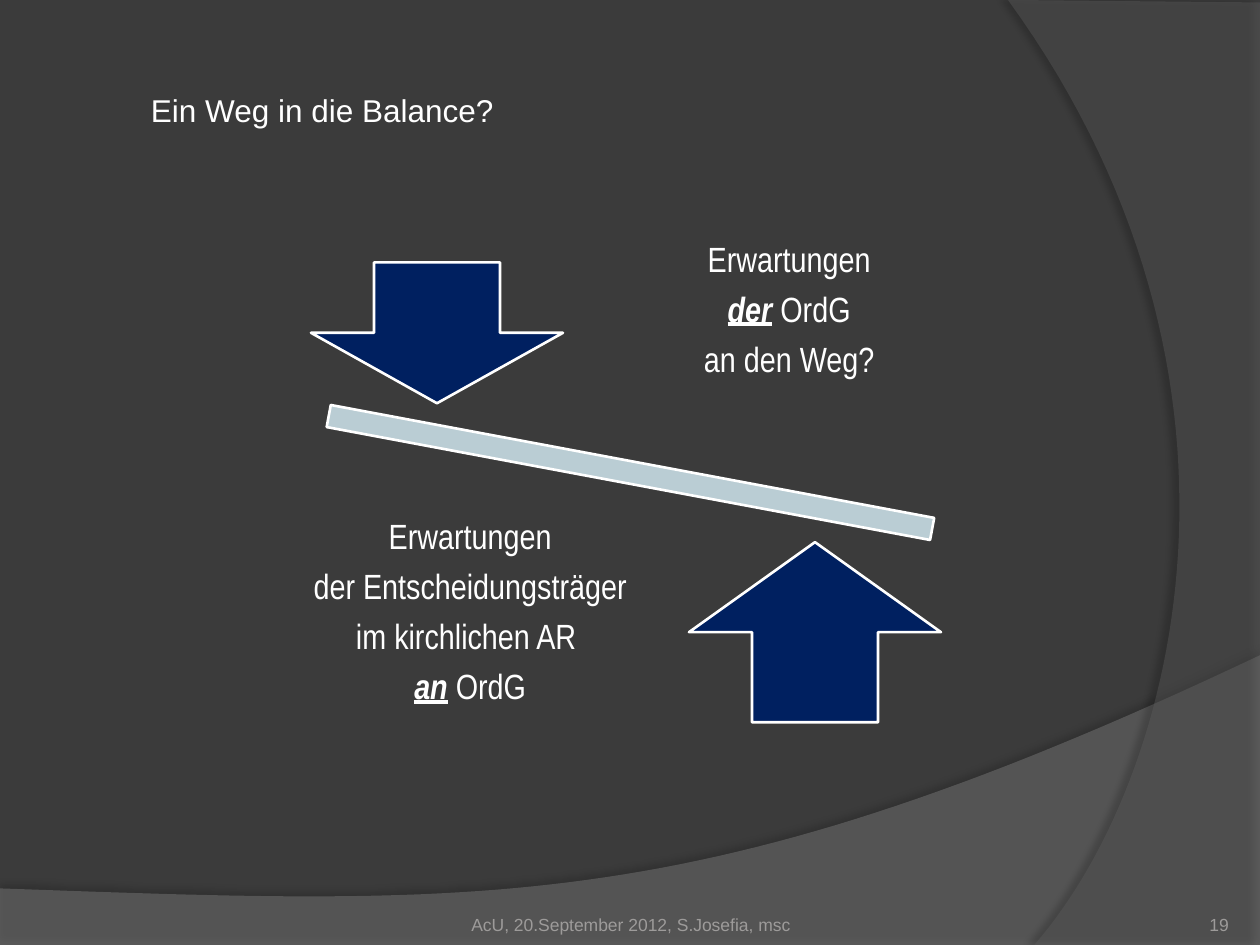
from lxml.etree import SubElement
from pptx import Presentation
from pptx.dml.color import RGBColor
from pptx.enum.shapes import MSO_SHAPE
from pptx.enum.text import MSO_ANCHOR, PP_ALIGN
from pptx.oxml.ns import qn
from pptx.util import Cm, Pt

DARK = RGBColor(0x3B, 0x3B, 0x3B)
WAVE = RGBColor(0x7F, 0x7F, 0x7F)
ARC = RGBColor(0x5E, 0x5E, 0x5E)
NAVY = RGBColor(0x00, 0x20, 0x60)
PALE = RGBColor(0xBA, 0xCD, 0xD4)
WHITE = RGBColor(0xFF, 0xFF, 0xFF)
GREY = RGBColor(0x9D, 0x9B, 0x9A)


def add_text(slide, box, lines, size=20, font="Arial", color=WHITE,
             align=PP_ALIGN.CENTER, anchor=MSO_ANCHOR.MIDDLE, inset=0,
             spacing=None, after=0):
    """Each line is a list of (text, stressed) runs."""
    frame = slide.shapes.add_textbox(*map(Cm, box)).text_frame
    frame.word_wrap = True
    frame.vertical_anchor = anchor
    frame.margin_left = frame.margin_right = Cm(inset)
    frame.margin_top = frame.margin_bottom = Cm(inset)
    for i, line in enumerate(lines):
        para = frame.add_paragraph() if i else frame.paragraphs[0]
        para.alignment = align
        para.line_spacing = spacing
        para.space_after = Pt(after)
        for words, stress in line:
            run = para.add_run()
            run.text = words
            run.font.name, run.font.size = font, Pt(size)
            run.font.color.rgb = color
            if stress:
                run.font.bold = run.font.italic = run.font.underline = True


def add_solid(slide, kind, box, fill, turn=0):
    shape = slide.shapes.add_shape(kind, *map(Cm, box))
    shape.shadow.inherit = False
    shape.fill.solid()
    shape.fill.fore_color.rgb = fill
    shape.line.color.rgb = WHITE
    shape.line.width = Pt(1.5)
    shape.rotation = turn


def curve(a, b, c, d, steps=60):
    """Points along a cubic Bezier curve."""
    for i in range(steps + 1):
        t = i / steps
        u = 1 - t
        yield tuple(u**3 * p + 3 * u * u * t * q + 3 * u * t * t * r + t**3 * s
                    for p, q, r, s in zip(a, b, c, d))


def add_sheet(slide, box, points, fill, alpha, shade, blur, dist, angle):
    """See-through outline with a soft shadow; points are relative to box."""
    spots = [(Cm(box[0] + x), Cm(box[1] + y)) for x, y in points]
    maker = slide.shapes.build_freeform(*spots[0], scale=1.0)
    maker.add_line_segments(spots[1:], close=True)
    shape = maker.convert_to_shape()
    shape.fill.solid()
    shape.fill.fore_color.rgb = fill
    shape.line.fill.background()
    shape.shadow.inherit = False
    props = shape.element.spPr
    tint = props.find(qn("a:solidFill")).find(qn("a:srgbClr"))
    SubElement(tint, qn("a:alpha"), val=str(alpha * 1000))
    shadow = SubElement(props.find(qn("a:effectLst")), qn("a:outerShdw"),
                        blurRad=str(Pt(blur)), dist=str(Pt(dist)),
                        dir=str(angle * 60000), algn="ctr", rotWithShape="0")
    black = SubElement(shadow, qn("a:srgbClr"), val="000000")
    SubElement(black, qn("a:alpha"), val=str(shade * 1000))


def add_back(slide, box):
    slide.background.fill.solid()
    slide.background.fill.fore_color.rgb = DARK
    wide, high = box[2:]
    # Wave along the bottom
    wave = curve((wide, 13.21), (14.2, 18.52), (9.93, 18.26), (0, 17.91))
    add_sheet(slide, box, [(0, high), (wide, high), *wave],
              WAVE, 45, 35, 4, 3.5, 270)
    # Arc down the right side
    arc = curve((20.85, high), (23.75, 15.72), (25.86, 7.62), (20.32, 0))
    add_sheet(slide, box, [(wide, 0.05), (wide, high), *arc],
              ARC, 40, 45, 4, 4, 180)


def add_scale(slide, box):
    left, top = box[:2]

    def place(x, y, w, h):
        return left + x, top + y, w, h

    style = dict(font="Arial Narrow", inset=0.41, spacing=0.9, after=7)
    # Tilted beam
    add_solid(slide, MSO_SHAPE.MATH_MINUS, place(0, 4.67, 16.84, 1.93),
              PALE, turn=10.6)
    # Arrows pressing on both ends
    add_solid(slide, MSO_SHAPE.DOWN_ARROW, place(1.98, 1.4, 5.08, 2.84), NAVY)
    add_solid(slide, MSO_SHAPE.UP_ARROW, place(9.6, 7.04, 5.08, 3.63), NAVY)
    # Expectations of either side
    add_text(slide, place(7.44, 0, 8.36, 4.75),
             [[("Erwartungen", False)],
              [("der", True), (" OrdG", False)],
              [("an den Weg?", False)]], **style)
    add_text(slide, place(0.81, 6.1, 8.76, 4.75),
             [[("Erwartungen", False)],
              [("der Entscheidungsträger", False)],
              [("im kirchlichen AR ", False)],
              [("an", True), (" OrdG", False)]], **style)


def add_foot(slide, box):
    left, top, wide, high = box
    style = dict(size=10, color=GREY, anchor=MSO_ANCHOR.BOTTOM)
    add_text(slide, (left, top, 8.05, high),
             [[("AcU, 20.September 2012, S.Josefia, msc", False)]], **style)
    add_text(slide, (left + wide - 2.11, top, 2.11, high), [[("19", False)]],
             align=PP_ALIGN.RIGHT, **style)


def main():
    deck = Presentation()
    deck.slide_width, deck.slide_height = Cm(25.4), Cm(19.05)
    slide = deck.slides.add_slide(deck.slide_layouts[6])
    add_back(slide, (0, 0, 25.4, 19.05))
    add_foot(slide, (8.69, 17.83, 16.08, 1.02))
    add_scale(slide, (4.29, 3.89, 16.84, 10.85))
    # Title
    add_text(slide, (1.3, 1.12, 10.39, 2.21),
             [[("Ein Weg in die Balance?", False)]], size=18)
    deck.save("out.pptx")


if __name__ == "__main__":
    main()
